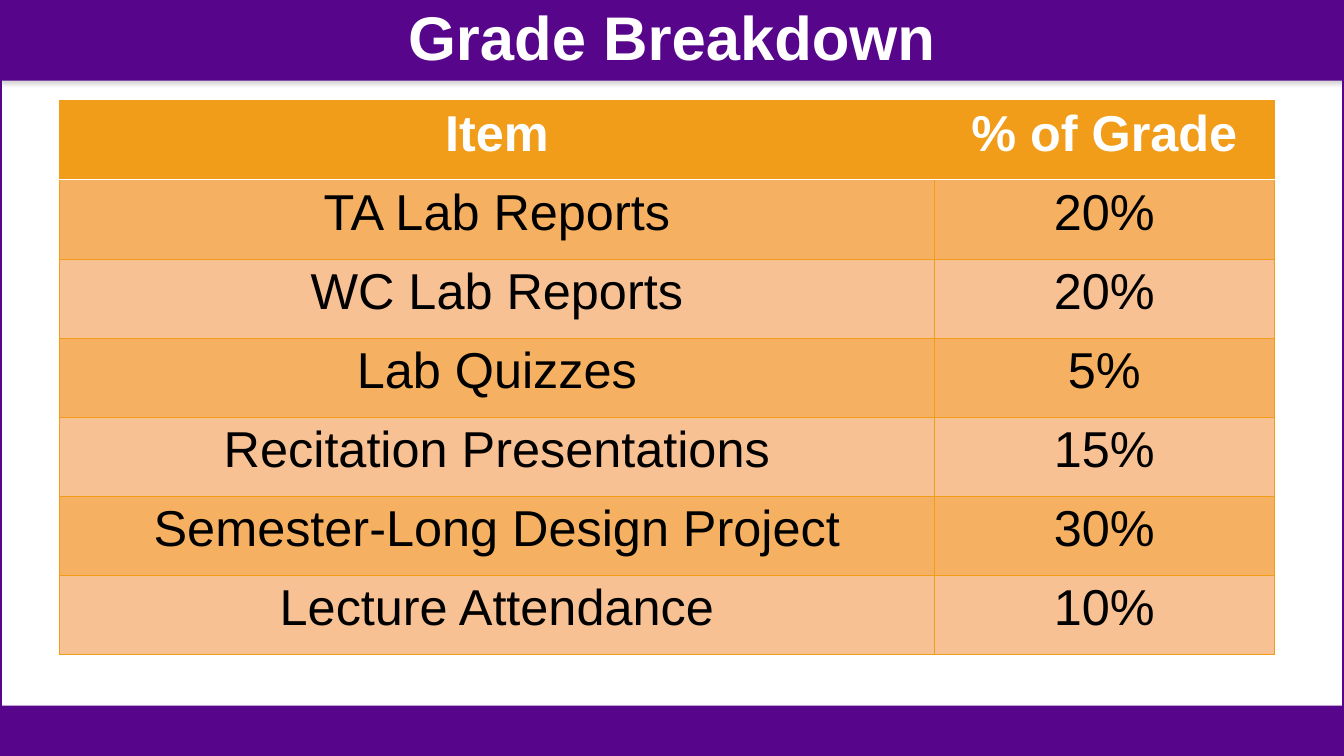
from lxml import etree
from pptx import Presentation
from pptx import util as u
from pptx.dml.color import RGBColor
from pptx.enum import shapes, text
from pptx.oxml import ns

PURPLE = RGBColor(0x57, 0x06, 0x8C)
ORANGE = RGBColor(0xF1, 0x9D, 0x19)
AMBER = RGBColor(0xF5, 0xB1, 0x61)
PEACH = RGBColor(0xF8, 0xC1, 0x93)
GRAY = RGBColor(0x80, 0x80, 0x80)
WHITE = RGBColor(0xFF, 0xFF, 0xFF)
BLACK = RGBColor(0, 0, 0)
FONT = "Arial"

WIDTH, HEIGHT = u.Inches(13.33), u.Inches(7.5)
HEADER_H, FOOTER_H = u.Inches(0.8), u.Inches(0.5)

GRADES = [
    ("Item", "% of Grade"),
    ("TA Lab Reports", "20%"),
    ("WC Lab Reports", "20%"),
    ("Lab Quizzes", "5%"),
    ("Recitation Presentations", "15%"),
    ("Semester-Long Design Project", "30%"),
    ("Lecture Attendance", "10%"),
]
COLUMN_SHARES = (0.72, 0.28)


def add_child(parent, tag, **attrs):
    """Append a DrawingML element with the given attributes."""
    child = etree.SubElement(parent, ns.qn(tag))
    for name, value in attrs.items():
        child.set(name, str(value))
    return child


def style_paragraph(p, size, color, bold):
    """Centre a paragraph and set its font."""
    p.alignment = text.PP_ALIGN.CENTER
    p.font.name = FONT
    p.font.size = u.Pt(size)
    p.font.bold = bold
    p.font.color.rgb = color


def add_band(s, left, top, width, height):
    """Draw a purple band with a soft shadow below it."""
    sp = s.shapes.add_shape(shapes.MSO_SHAPE.RECTANGLE, left, top, width, height)
    sp.shadow.inherit = False
    sp.fill.solid()
    sp.fill.fore_color.rgb = PURPLE
    sp.line.fill.background()
    effects = sp.element.spPr.find(ns.qn("a:effectLst"))
    shadow = add_child(effects, "a:outerShdw", blurRad=u.Pt(3.1), dist=u.Pt(1.8),
                       dir=90 * 60000, rotWithShape=0)
    add_child(add_child(shadow, "a:srgbClr", val=GRAY), "a:alpha", val=35000)


def add_outline(s, left, top, width, height):
    """Draw the purple outline of the slide."""
    sp = s.shapes.add_shape(shapes.MSO_SHAPE.RECTANGLE, left, top, width, height)
    sp.shadow.inherit = False
    sp.fill.background()
    sp.line.color.rgb = PURPLE
    sp.line.width = u.Pt(2.25)


def place_title(s, title, left, top, width, height):
    """Set the title in front of the header band."""
    sp = s.shapes.title
    sp.left, sp.top, sp.width, sp.height = left, top, width, height
    sp.element.getparent().append(sp.element)
    tf = sp.text_frame
    tf.text = title
    tf.word_wrap = True
    tf.vertical_anchor = text.MSO_ANCHOR.MIDDLE
    p = tf.paragraphs[0]
    p.line_spacing = 0.9
    style_paragraph(p, 44, WHITE, True)


def add_border(cell, side, color, width):
    """Draw one border of a table cell."""
    ln = add_child(cell._tc.get_or_add_tcPr(), f"a:ln{side}", w=u.Pt(width))
    add_child(add_child(ln, "a:solidFill"), "a:srgbClr", val=color)


def add_grades(s, rows, left, top, width, height):
    """Draw the grade table with an orange header and banded rows."""
    table = s.shapes.add_table(len(rows), len(COLUMN_SHARES), left, top, width, height).table
    for column, share in zip(table.columns, COLUMN_SHARES):
        column.width = int(width * share)
    for i, row in enumerate(rows):
        header = i == 0
        white_side = {0: "B", 1: "T"}.get(i)
        for j, value in enumerate(row):
            cell = table.cell(i, j)
            for side in "LRTB":
                if side == white_side:
                    add_border(cell, side, WHITE, 1)
                else:
                    add_border(cell, side, ORANGE, 0.5)
            cell.fill.solid()
            cell.fill.fore_color.rgb = ORANGE if header else (PEACH, AMBER)[i % 2]
            cell.text = value
            style_paragraph(cell.text_frame.paragraphs[0], 36,
                            WHITE if header else BLACK, header)


def build_grade_slide(prs):
    """Build the grade breakdown slide."""
    s = prs.slides.add_slide(prs.slide_layouts[5])
    add_band(s, 0, 0, WIDTH, HEADER_H)
    add_outline(s, 0, 0, WIDTH, HEIGHT)
    add_band(s, 0, HEIGHT - FOOTER_H, WIDTH, FOOTER_H)
    place_title(s, "Grade Breakdown", 0, 0, WIDTH, HEADER_H)
    add_grades(s, GRADES, u.Inches(0.59), u.Inches(1), u.Inches(12.05), u.Inches(5.49))


def main():
    """Create and save the presentation."""
    prs = Presentation()
    prs.slide_width, prs.slide_height = WIDTH, HEIGHT
    build_grade_slide(prs)
    prs.save("out.pptx")


if __name__ == "__main__":
    main()
